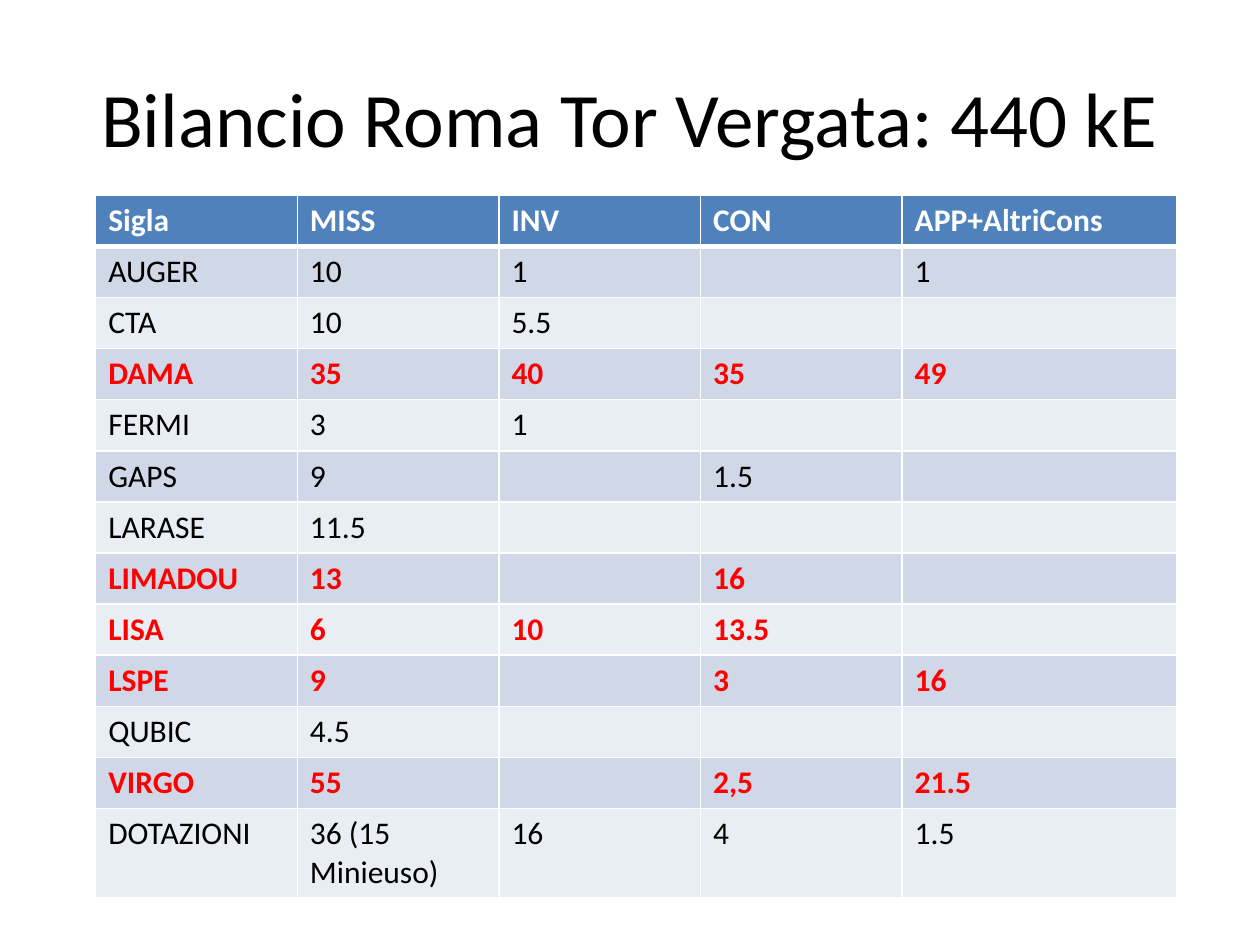
from lxml.etree import SubElement
from pptx import Presentation
from pptx.dml.color import RGBColor
from pptx.enum.text import MSO_ANCHOR, PP_ALIGN
from pptx.oxml.ns import qn
from pptx.util import Inches, Pt

# Content
TITLE = "Bilancio Roma Tor Vergata: 440 kE"
HEADER = ("Sigla", "MISS", "INV", "CON", "APP+AltriCons")
BUDGET = [
    ("AUGER", "10", "1", "", "1"),
    ("CTA", "10", "5.5", "", ""),
    ("DAMA", "35", "40", "35", "49"),
    ("FERMI", "3", "1", "", ""),
    ("GAPS", "9", "", "1.5", ""),
    ("LARASE", "11.5", "", "", ""),
    ("LIMADOU", "13", "", "16", ""),
    ("LISA", "6", "10", "13.5", ""),
    ("LSPE", "9", "", "3", "16"),
    ("QUBIC", "4.5", "", "", ""),
    ("VIRGO", "55", "", "2,5", "21.5"),
    ("DOTAZIONI", "36 (15 Minieuso)", "16", "4", "1.5"),
]
HIGHLIGHTED = {"DAMA", "LIMADOU", "LISA", "LSPE", "VIRGO"}

# Format
WHITE = RGBColor(0xFF, 0xFF, 0xFF)
BLACK = RGBColor(0x00, 0x00, 0x00)
RED = RGBColor(0xFF, 0x00, 0x00)
BLUE = RGBColor(0x4F, 0x81, 0xBD)
BANDS = (RGBColor(0xE9, 0xED, 0xF4), RGBColor(0xD0, 0xD8, 0xE8))
FONT = "Calibri"

# Grid, in inches
LEFT, TOP, HEIGHT = 0.76, 1.55, 5.57
COLUMNS = (1.6, 1.6, 1.6, 1.6, 2.18)
LAST_ROW = 0.7
ROW = (HEIGHT - LAST_ROW) / len(BUDGET)


def set_font(font, **values):
    for name, value in values.items():
        setattr(font, name, value)


def add_border(cell, side, points):
    properties = cell._tc.get_or_add_tcPr()
    line = SubElement(properties, qn(f"a:ln{side}"), w=str(Pt(points)))
    fill = SubElement(line, qn("a:solidFill"))
    SubElement(fill, qn("a:srgbClr"), val=str(WHITE))


def format_cell(cell, text, fill, color, bold, borders):
    for side, points in borders.items():
        add_border(cell, side, points)
    cell.fill.solid()
    cell.fill.fore_color.rgb = fill
    cell.text = text
    font = cell.text_frame.paragraphs[0].font
    set_font(font, name=FONT, size=Pt(18), bold=bold)
    font.color.rgb = color


deck = Presentation()
deck.slide_width, deck.slide_height = Inches(10), Inches(7.5)
page = deck.slides.add_slide(deck.slide_layouts[5])

# Title
title = page.shapes.title
title.left, title.top, title.width, title.height = map(Inches, (0.5, 0.3, 9, 1.25))
title.text_frame.text = TITLE
title.text_frame.vertical_anchor = MSO_ANCHOR.MIDDLE
heading = title.text_frame.paragraphs[0]
heading.alignment = PP_ALIGN.CENTER
set_font(heading.font, name=FONT, size=Pt(44))
heading.font.color.rgb = BLACK

# Budget table
rows = [HEADER, *BUDGET]
table = page.shapes.add_table(
    len(rows), len(COLUMNS),
    *map(Inches, (LEFT, TOP, sum(COLUMNS), HEIGHT))).table
for column, width in zip(table.columns, COLUMNS):
    column.width = Inches(width)
for index, values in enumerate(rows):
    is_header, is_last = index == 0, index == len(rows) - 1
    highlighted = values[0] in HIGHLIGHTED
    table.rows[index].height = Inches(LAST_ROW if is_last else ROW)
    fill = BLUE if is_header else BANDS[index % 2]
    color = WHITE if is_header else RED if highlighted else BLACK
    borders = {"L": 1, "R": 1, "T": 3 if index == 1 else 1, "B": 3 if is_header else 1}
    for number, text in enumerate(values):
        format_cell(table.cell(index, number), text, fill, color,
                    is_header or highlighted, borders)

deck.save("out.pptx")
